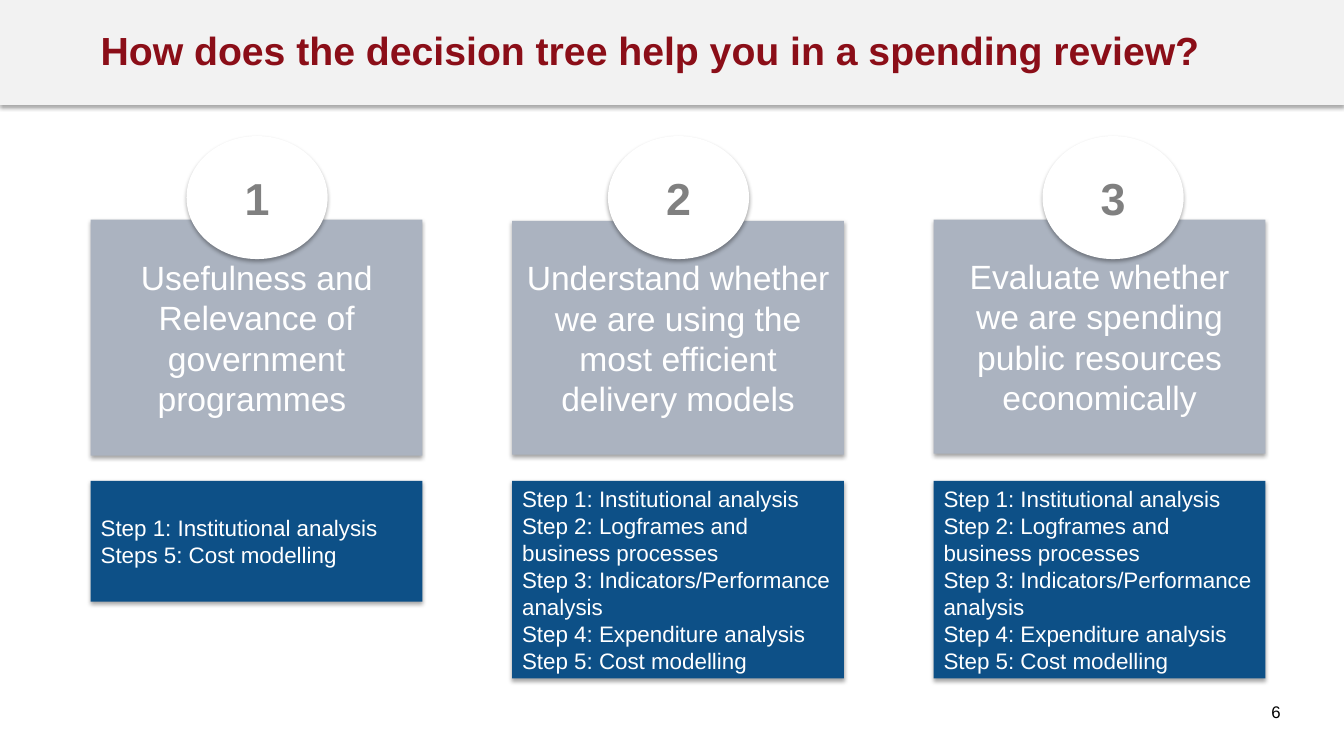
from lxml import etree
from pptx import Presentation
from pptx.dml.color import RGBColor
from pptx.enum import shapes, text
from pptx.oxml import ns
from pptx.util import Inches, Pt

COLORS = {
    "band": "F2F2F2", "title": "8B0E18", "goal": "ABB3C0", "steps": "0D5087",
    "white": "FFFFFF", "number": "808080", "black": "000000",
}
RECT = shapes.MSO_SHAPE.RECTANGLE
OVAL = shapes.MSO_SHAPE.OVAL
LEFT, CENTER, RIGHT = text.PP_ALIGN.LEFT, text.PP_ALIGN.CENTER, text.PP_ALIGN.RIGHT
TOP, MIDDLE = text.MSO_ANCHOR.TOP, text.MSO_ANCHOR.MIDDLE

COLUMN_LEFT, COLUMN_STEP, COLUMN_WIDTH = 0.9, 4.18, 3.29
CIRCLE_WIDTH, CIRCLE_HEIGHT = 1.4, 1.22

FULL_STEPS = [
    "Step 1: Institutional analysis",
    "Step 2: Logframes and business processes",
    "Step 3: Indicators/Performance analysis",
    "Step 4: Expenditure analysis",
    "Step 5: Cost modelling",
]
# Goal, its top and height, circle offset, steps, height of the steps box
COLUMNS = [
    ("Usefulness and Relevance of government programmes ", 2.18, 2.34, 0.95,
     ["Step 1: Institutional analysis", "Steps 5: Cost modelling"], 1.2),
    ("Understand whether we are using the most efficient delivery models",
     2.19, 2.32, 0.95, FULL_STEPS, 1.96),
    ("Evaluate whether we are spending public resources economically",
     2.18, 2.32, 1.08, FULL_STEPS, 1.96),
]


def rgb(name):
    return RGBColor.from_string(COLORS[name])


def add_shadow(sp):
    sp.shadow.inherit = False
    effects = sp._element.spPr.find(ns.qn("a:effectLst"))
    shadow = etree.SubElement(effects, ns.qn("a:outerShdw"), blurRad=str(Pt(3.1)),
                              dist=str(Pt(1.8)), dir="5400000", rotWithShape="0")
    color = etree.SubElement(shadow, ns.qn("a:srgbClr"), val=COLORS["black"])
    etree.SubElement(color, ns.qn("a:alpha"), val="35000")


def write(sp, lines, size, color, align=LEFT, anchor=MIDDLE, bold=False):
    tf = sp.text_frame
    tf.word_wrap = True
    tf.vertical_anchor = anchor
    tf.text = "\n".join(lines)
    for p in tf.paragraphs:
        p.alignment = align
        for r in p.runs:
            r.font.name = "Arial"
            r.font.size = Pt(size)
            r.font.bold = bold
            r.font.color.rgb = rgb(color)


def add_block(s, kind, box, fill):
    sp = s.shapes.add_shape(kind, *map(Inches, box))
    sp.fill.solid()
    sp.fill.fore_color.rgb = rgb(fill)
    sp.line.fill.background()
    add_shadow(sp)
    return sp


def add_label(s, box, words, size, color, **style):
    sp = s.shapes.add_textbox(*map(Inches, box))
    write(sp, [words], size, color, **style)


def add_header(s, left, top, width, height):
    add_block(s, RECT, (left, top, width, height), "band")
    add_label(s, (left + 0.9, top + 0.27, 11.51, 0.45),
              "How does the decision tree help you in a spending review?",
              28, "title", bold=True)


def add_column(s, left, top, width, number, column):
    goal, goal_top, goal_height, circle_offset, steps, steps_height = column

    # Goal
    sp = add_block(s, RECT, (left, goal_top, width, goal_height), "goal")
    write(sp, [goal], 24, "white", CENTER)

    # Number, overlapping the goal
    sp = add_block(s, OVAL, (left + circle_offset, top, CIRCLE_WIDTH, CIRCLE_HEIGHT), "white")
    write(sp, [str(number)], 32, "number", CENTER, bold=True)

    # Steps that serve the goal
    sp = add_block(s, RECT, (left, top + 3.42, width, steps_height), "steps")
    write(sp, steps, 16, "white")


def main():
    prs = Presentation()
    prs.slide_width, prs.slide_height = Inches(13.33), Inches(7.5)
    s = prs.slides.add_slide(prs.slide_layouts[6])

    add_header(s, 0, 0, 13.33, 1.04)
    for i, column in enumerate(COLUMNS):
        add_column(s, COLUMN_LEFT + i * COLUMN_STEP, 1.35, COLUMN_WIDTH, i + 1, column)

    # Page number
    add_label(s, (12.04, 6.91, 0.76, 0.39), "6", 12, "black", align=RIGHT, anchor=TOP)

    prs.save("out.pptx")


if __name__ == "__main__":
    main()
